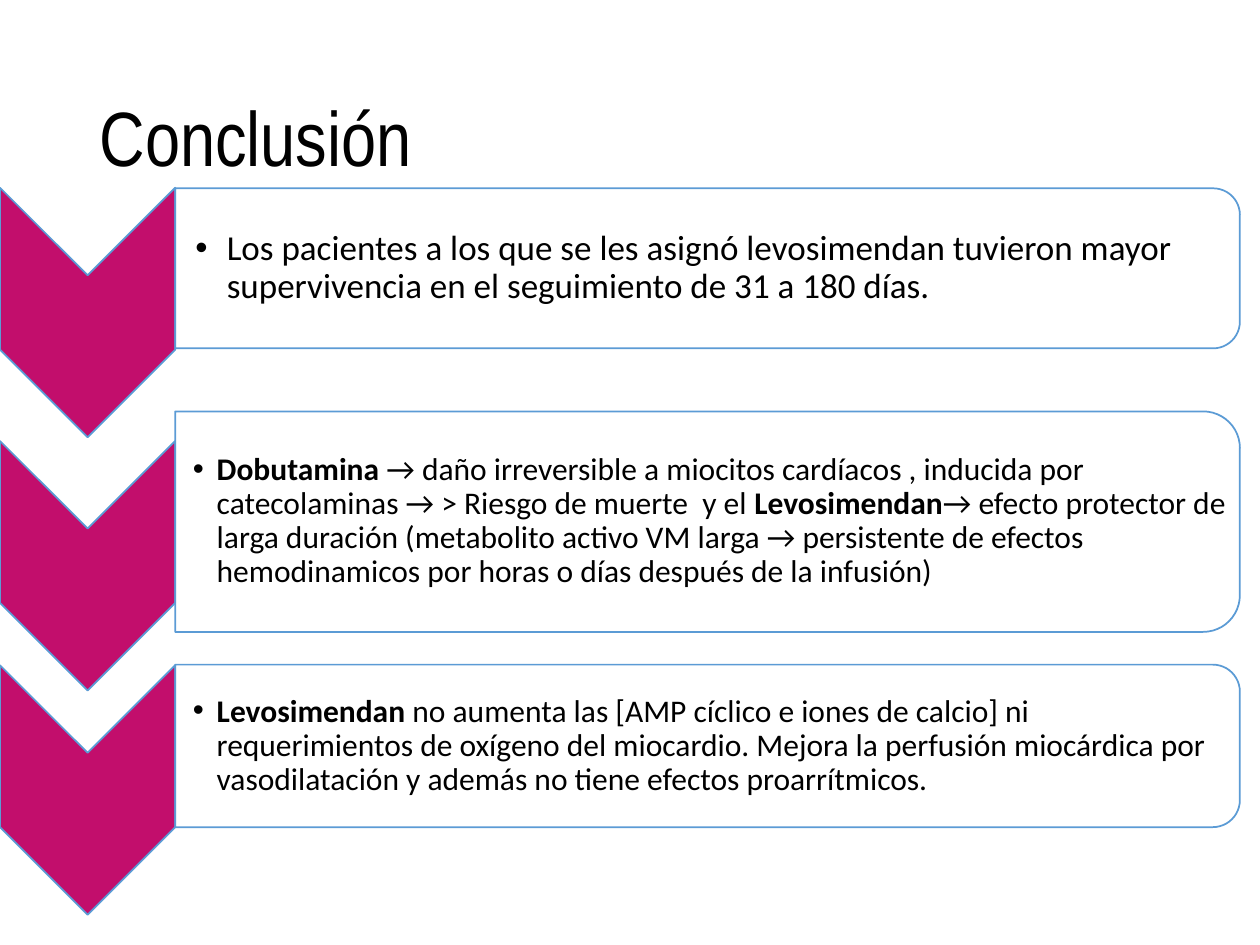
from lxml import etree
from pptx import Presentation
from pptx import util as u
from pptx.dml.color import RGBColor
from pptx.enum import shapes, text
from pptx.oxml.ns import qn

COLORS = {"ink": "000000", "pink": "C20E6C", "edge": "5B9BD5", "white": "FFFFFF"}
KIND = shapes.MSO_SHAPE


def rgb(name):
    return RGBColor.from_string(COLORS[name])


def write(para, words, font="Calibri", size=18, bold=False, color="ink"):
    run = para.add_run()
    run.text = words
    run.font.name, run.font.size, run.font.bold = font, u.Pt(size), bold
    run.font.color.rgb = rgb(color)


class Deck:
    """Holds the style and the current slide."""
    left, wide = 1.39, 8.45        # text panels
    arrow = (1.98, 1.39)           # chevron before its quarter turn
    drop = 0.35                    # chevron centre below panel centre

    def __init__(self, prs):
        self.slide = prs.slides.add_slide(prs.slide_layouts[5])

    def title(self, words):
        box = self.slide.shapes.title
        box.left, box.top = u.Inches(0.69), u.Inches(0.4)
        box.width, box.height = u.Inches(8.62), u.Inches(1.45)
        box.text_frame.vertical_anchor = text.MSO_ANCHOR.MIDDLE
        para = box.text_frame.paragraphs[0]
        para.alignment, para.line_spacing = text.PP_ALIGN.LEFT, 0.9
        write(para, words, font="Arial Narrow", size=44)

    def turned(self, kind, x, y, w, h, fill):
        """Shape centred on x, y and turned a quarter clockwise."""
        shape = self.slide.shapes.add_shape(
            kind, u.Inches(x - w / 2), u.Inches(y - h / 2), u.Inches(w), u.Inches(h))
        shape.rotation = 90
        shape.shadow.inherit = False
        shape.fill.solid()
        shape.fill.fore_color.rgb = rgb(fill)
        shape.line.color.rgb = rgb("edge")
        shape.line.width = u.Pt(1)
        return shape

    def chevron(self, mid):
        w, h = self.arrow
        self.turned(KIND.CHEVRON, h / 2, mid + self.drop, w, h, "pink")

    def panel(self, mid, high):
        shape = self.turned(KIND.ROUND_2_SAME_RECTANGLE, self.left + self.wide / 2,
                            mid, high, self.wide, "white")
        tint = shape.fill._xPr.find(qn("a:solidFill"))[0]
        etree.SubElement(tint, qn("a:alpha"), val="90000")

    def bullet(self, mid, high, runs, size, inset, indent):
        high -= 0.13
        box = self.slide.shapes.add_textbox(
            u.Inches(self.left), u.Inches(mid - high / 2), u.Inches(8.37), u.Inches(high))
        frame = box.text_frame
        frame.word_wrap = True
        frame.vertical_anchor = text.MSO_ANCHOR.MIDDLE
        frame.margin_left = u.Inches(inset)
        frame.margin_top = frame.margin_right = frame.margin_bottom = u.Inches(0.01)
        para = frame.paragraphs[0]
        para.level, para.line_spacing = 1, 0.9
        props = para._p.get_or_add_pPr()
        props.set("marL", str(u.Inches(indent)))
        props.set("indent", str(-u.Inches(indent)))
        etree.SubElement(props, qn("a:buFont"), typeface="Arial")
        etree.SubElement(props, qn("a:buChar"), char="•")
        for words, bold in runs:
            write(para, words, size=size, bold=bold)


# Panel centre, panel height, text runs (words, bold), size, inset, indent
STEPS = [
    (2.13, 1.27, [
        ("Los pacientes a los que se les asignó levosimendan tuvieron mayor "
         "supervivencia en el seguimiento de 31 a 180 días.", False)], 20, 0.16, 0.25),
    (4.14, 1.75, [
        ("Dobutamina ", True),
        ("→ daño irreversible a miocitos cardíacos , inducida por catecolaminas "
         "→ > Riesgo de muerte  y el ", False),
        ("Levosimendan", True),
        ("→ efecto protector de larga duración (metabolito activo VM larga → "
         "persistente de efectos hemodinamicos por horas o días después de la "
         "infusión)", False)], 18, 0.14, 0.19),
    (5.92, 1.29, [
        ("Levosimendan", True),
        (" no aumenta las [AMP cíclico e iones de calcio] ni requerimientos de "
         "oxígeno del miocardio. Mejora la perfusión miocárdica por vasodilatación "
         "y además no tiene efectos proarrítmicos.", False)], 18, 0.14, 0.19),
]


def main():
    prs = Presentation()
    prs.slide_width, prs.slide_height = u.Inches(10), u.Inches(7.5)
    deck = Deck(prs)
    deck.title("Conclusión")
    # Chevron list
    for mid, high, runs, size, inset, indent in STEPS:
        deck.chevron(mid)
        deck.panel(mid, high)
        deck.bullet(mid, high, runs, size, inset, indent)
    prs.save("out.pptx")


if __name__ == "__main__":
    main()
